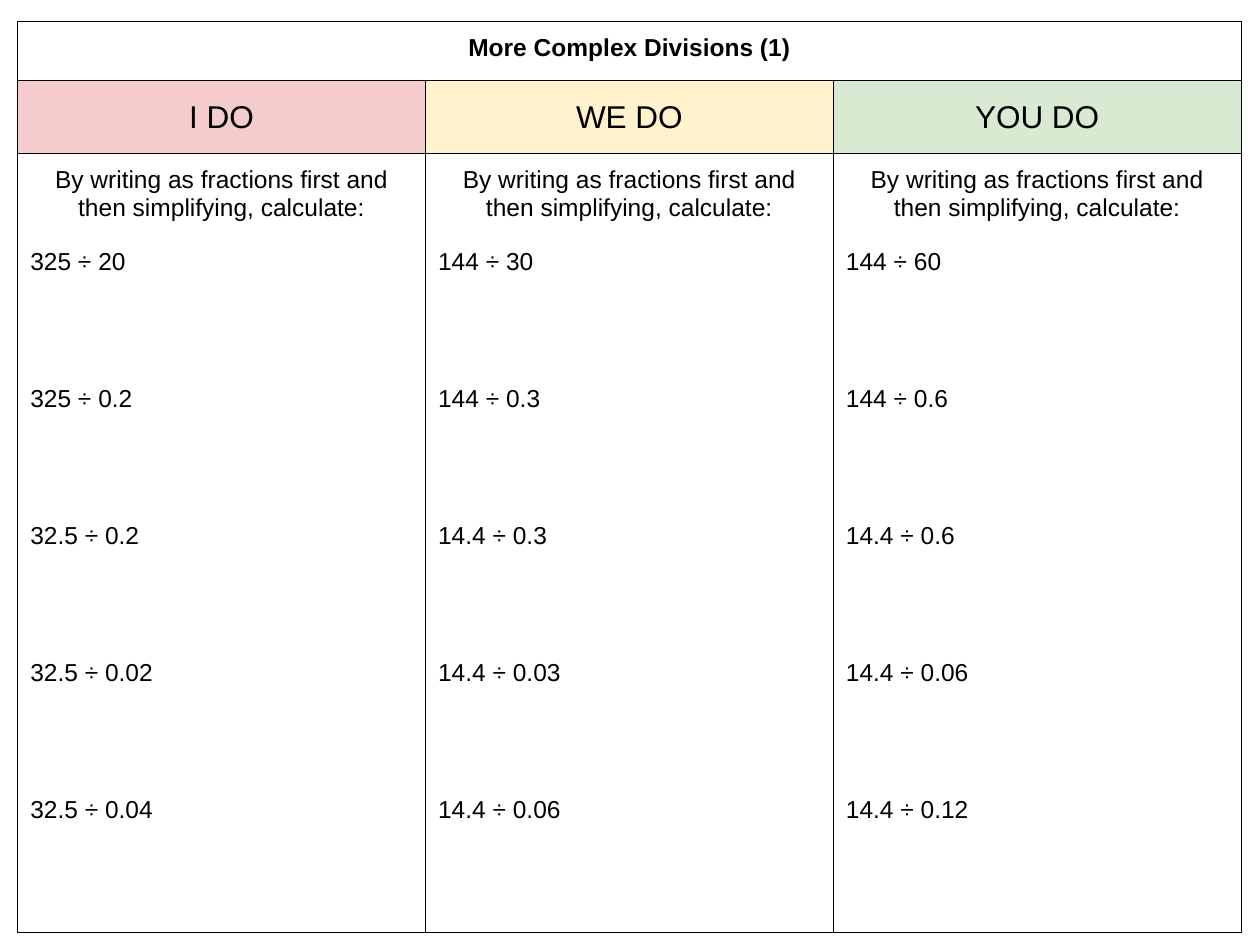
from lxml import etree
from pptx import Presentation
from pptx.dml.color import RGBColor
from pptx.enum.text import MSO_ANCHOR, PP_ALIGN
from pptx.oxml.ns import qn
from pptx.util import Inches, Pt

LEFT, CENTER = PP_ALIGN.LEFT, PP_ALIGN.CENTER
TOP, MIDDLE = MSO_ANCHOR.TOP, MSO_ANCHOR.MIDDLE

BLACK = RGBColor(0x00, 0x00, 0x00)
PINK = RGBColor(0xF4, 0xCC, 0xCC)
CREAM = RGBColor(0xFF, 0xF2, 0xCC)
GREEN = RGBColor(0xD9, 0xEA, 0xD3)

FONT = "Arial"
TABLE_LEFT, TABLE_TOP, TABLE_WIDTH = 0.14, 0.17, 9.71
ROW_HEIGHTS = (0.47, 0.58, 6.18)
MARGIN = Inches(0.1)
BORDER_WIDTH = Pt(0.75)
FIRST_GAP, WORKING_GAP = 15.5, 62.5  # points above the first and later sums

TITLE = "More Complex Divisions (1)"
INSTRUCTION = "By writing as fractions first and then simplifying, calculate:"
STAGES = (
    ("I DO", PINK,
     ("325 ÷ 20", "325 ÷ 0.2", "32.5 ÷ 0.2", "32.5 ÷ 0.02", "32.5 ÷ 0.04")),
    ("WE DO", CREAM,
     ("144 ÷ 30", "144 ÷ 0.3", "14.4 ÷ 0.3", "14.4 ÷ 0.03", "14.4 ÷ 0.06")),
    ("YOU DO", GREEN,
     ("144 ÷ 60", "144 ÷ 0.6", "14.4 ÷ 0.6", "14.4 ÷ 0.06", "14.4 ÷ 0.12")),
)


def write(para, text, size=14, bold=False, align=LEFT, before=0):
    """Put formatted text into a paragraph."""
    para.alignment = align
    para.space_before = Pt(before)
    span = para.add_run()
    span.text = text
    span.font.name = FONT
    span.font.size = Pt(size)
    span.font.bold = bold
    span.font.color.rgb = BLACK


def add_borders(cell):
    """Rule all four sides of a cell."""
    properties = cell._tc.get_or_add_tcPr()
    for side in ("lnL", "lnR", "lnT", "lnB"):
        line = etree.SubElement(properties, qn(f"a:{side}"), w=str(BORDER_WIDTH))
        fill = etree.SubElement(line, qn("a:solidFill"))
        etree.SubElement(fill, qn("a:srgbClr"), val=str(BLACK))


def format_cell(cell):
    """Give a cell its shared margins, borders and empty fill."""
    cell.margin_left = cell.margin_right = MARGIN
    cell.margin_top = cell.margin_bottom = MARGIN
    cell.vertical_anchor = TOP
    add_borders(cell)
    cell.fill.background()


def add_grid(page):
    """Add the plain table that holds the whole lesson."""
    frame = page.shapes.add_table(
        len(ROW_HEIGHTS), len(STAGES), Inches(TABLE_LEFT), Inches(TABLE_TOP),
        Inches(TABLE_WIDTH), Inches(sum(ROW_HEIGHTS)))
    table = frame.table
    table.first_row = table.horz_banding = False
    for row, height in zip(table.rows, ROW_HEIGHTS):
        row.height = Inches(height)
    for cell in table.iter_cells():
        format_cell(cell)
    return table


def fill_heading(cell, text, color):
    cell.fill.solid()
    cell.fill.fore_color.rgb = color
    cell.vertical_anchor = MIDDLE
    write(cell.text_frame.paragraphs[0], text, size=18, align=CENTER)


def fill_sums(cell, sums):
    """Write the instruction and, with working space between, the sums."""
    body = cell.text_frame
    write(body.paragraphs[0], INSTRUCTION, align=CENTER)
    for index, text in enumerate(sums):
        write(body.add_paragraph(), text,
              before=WORKING_GAP if index else FIRST_GAP)


def main():
    deck = Presentation()
    deck.slide_width, deck.slide_height = Inches(10), Inches(7.5)
    page = deck.slides.add_slide(deck.slide_layouts[6])
    table = add_grid(page)

    # Title row across all columns
    title = table.cell(0, 0)
    title.merge(table.cell(0, len(STAGES) - 1))
    write(title.text_frame.paragraphs[0], TITLE, bold=True, align=CENTER)

    # One column for each stage
    for column, (heading, color, sums) in enumerate(STAGES):
        fill_heading(table.cell(1, column), heading, color)
        fill_sums(table.cell(2, column), sums)

    deck.save("out.pptx")


if __name__ == "__main__":
    main()
